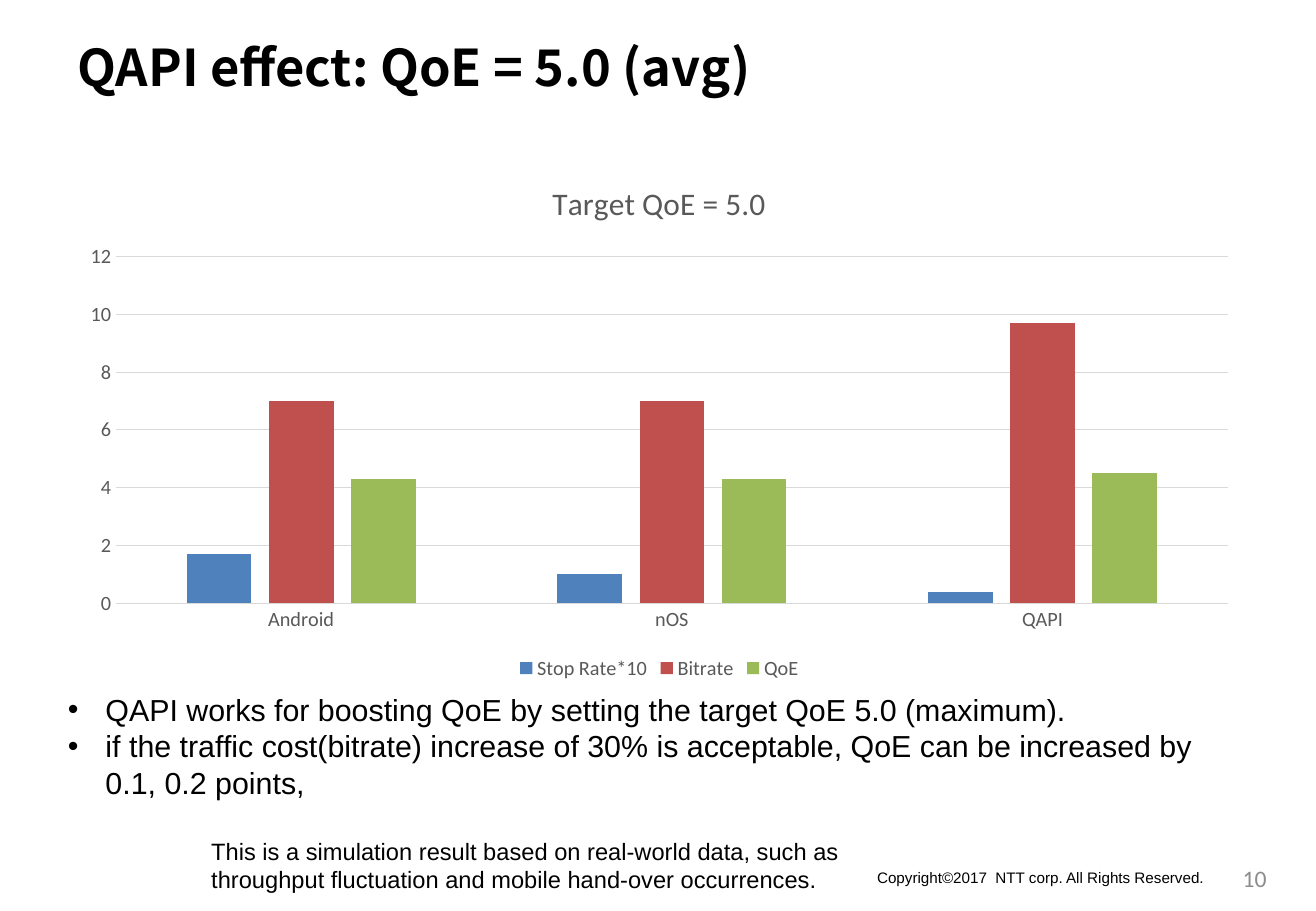
from lxml import etree
from pptx import Presentation
from pptx.chart.data import CategoryChartData
from pptx.dml.color import RGBColor
from pptx.enum.chart import XL_CHART_TYPE, XL_LEGEND_POSITION, XL_TICK_MARK
from pptx.enum.text import MSO_ANCHOR, PP_ALIGN
from pptx.oxml.ns import qn
from pptx.util import Inches, Pt

CLUSTERED = XL_CHART_TYPE.COLUMN_CLUSTERED
BOTTOM = XL_LEGEND_POSITION.BOTTOM
NO_TICK = XL_TICK_MARK.NONE
TOP, MIDDLE = MSO_ANCHOR.TOP, MSO_ANCHOR.MIDDLE
LEFT, CENTER = PP_ALIGN.LEFT, PP_ALIGN.CENTER

SLIDE_WIDTH, SLIDE_HEIGHT = Inches(10.83), Inches(7.5)
BLACK, LABEL_GREY, GRID_GREY, NUMBER_GREY = "000000", "595959", "D9D9D9", "8C8C8C"
BULLET_INDENT = Inches(0.31)

PLATFORMS = ("Android", "nOS", "QAPI")
MEASURES = (
    ("Stop Rate*10", (1.7, 1, 0.4), "4F81BD"),
    ("Bitrate", (7, 7, 9.7), "C0504D"),
    ("QoE", (4.3, 4.3, 4.5), "9BBB59"),
)
FINDINGS = (
    "QAPI works for boosting QoE by setting the target QoE 5.0 (maximum).",
    "if the traffic cost(bitrate) increase of 30% is acceptable, "
    "QoE can be increased by 0.1, 0.2 points,",
)
NOTE = (
    "This is a simulation result based on real-world data, such as",
    "throughput fluctuation and mobile hand-over occurrences.",
)


def color(hex_string):
    """Turn a hex string into a colour."""
    return RGBColor.from_string(hex_string)


def share(left, top, width, height):
    """Turn percentages of the slide into a box."""
    return (
        int(SLIDE_WIDTH * left / 100),
        int(SLIDE_HEIGHT * top / 100),
        int(SLIDE_WIDTH * width / 100),
        int(SLIDE_HEIGHT * height / 100),
    )


def style_font(font, size, ink=LABEL_GREY, face="Calibri", bold=False):
    """Set face, size, weight and colour of a font."""
    font.name, font.size, font.bold = face, Pt(size), bold
    font.color.rgb = color(ink)


def add_bullet(paragraph):
    """Give a paragraph a hanging round bullet."""
    properties = paragraph._p.get_or_add_pPr()
    properties.set("marL", str(BULLET_INDENT))
    properties.set("indent", str(-BULLET_INDENT))
    etree.SubElement(properties, qn("a:buFont")).set("typeface", "Arial")
    etree.SubElement(properties, qn("a:buChar")).set("char", "•")


def add_text(slide, box, lines, size, ink=BLACK, face="Arial", bold=False,
             align=LEFT, anchor=TOP, wrap=True, bullets=False):
    """Write lines as paragraphs in a box."""
    frame = slide.shapes.add_textbox(*box).text_frame
    frame.word_wrap, frame.vertical_anchor = wrap, anchor
    for index, line in enumerate(lines):
        paragraph = frame.add_paragraph() if index else frame.paragraphs[0]
        paragraph.alignment = align
        if bullets:
            add_bullet(paragraph)
        run = paragraph.add_run()
        run.text = line
        style_font(run.font, size, ink, face, bold)


def add_effect_chart(slide, box):
    """Draw the measures of each platform as clustered columns."""
    data = CategoryChartData()
    data.categories = PLATFORMS
    for name, values, _ in MEASURES:
        data.add_series(name, values)
    chart = slide.shapes.add_chart(CLUSTERED, *box, data).chart
    style_font(chart.font, 12)

    chart.has_title = True
    heading = chart.chart_title.text_frame.paragraphs[0].add_run()
    heading.text = "Target QoE = 5.0"
    style_font(heading.font, 18.6)
    chart.chart_title.include_in_layout = False

    chart.has_legend = True
    chart.legend.position = BOTTOM
    chart.legend.include_in_layout = False
    style_font(chart.legend.font, 12)

    plot = chart.plots[0]
    plot.gap_width, plot.overlap, plot.vary_by_categories = 219, -27, False
    for series, (_, _, fill) in zip(plot.series, MEASURES):
        series.format.fill.solid()
        series.format.fill.fore_color.rgb = color(fill)
        series.invert_if_negative = False

    platforms, scale = chart.category_axis, chart.value_axis
    for axis in (platforms, scale):
        axis.major_tick_mark = axis.minor_tick_mark = NO_TICK
        style_font(axis.tick_labels.font, 12)
    scale.minimum_scale, scale.maximum_scale, scale.major_unit = 0, 12, 2
    scale.has_major_gridlines = True
    scale.format.line.fill.background()
    for line in (platforms.format.line, scale.major_gridlines.format.line):
        line.color.rgb = color(GRID_GREY)
        line.width = Pt(0.75)


def add_footer(slide, copyright_box, number_box):
    """Place the copyright line and the page number."""
    add_text(slide, copyright_box,
             ["Copyright©2017  NTT corp. All Rights Reserved."], 9, wrap=False)
    add_text(slide, number_box, ["10"], 14, ink=NUMBER_GREY, face="Calibri",
             align=CENTER, anchor=MIDDLE)


def main():
    """Build the slide and save it."""
    deck = Presentation()
    deck.slide_width, deck.slide_height = SLIDE_WIDTH, SLIDE_HEIGHT
    slide = deck.slides.add_slide(deck.slide_layouts[6])
    add_footer(slide, share(65.74, 94.67, 26.96, 3.33),
               share(92.8, 93.73, 5.08, 5.33))
    add_text(slide, share(4.99, 3.33, 74.98, 8.13),
             ["QAPI effect: QoE = 5.0 (avg)"], 30,
             face="Noto Sans CJK JP", bold=True)
    add_effect_chart(slide, share(5.08, 17.47, 90.03, 57.73))
    add_text(slide, share(4.25, 75.2, 90.12, 13.47), FINDINGS, 18, bullets=True)
    add_text(slide, share(15.14, 91.2, 49.77, 7.6), NOTE, 14, wrap=False)
    deck.save("out.pptx")


if __name__ == "__main__":
    main()
